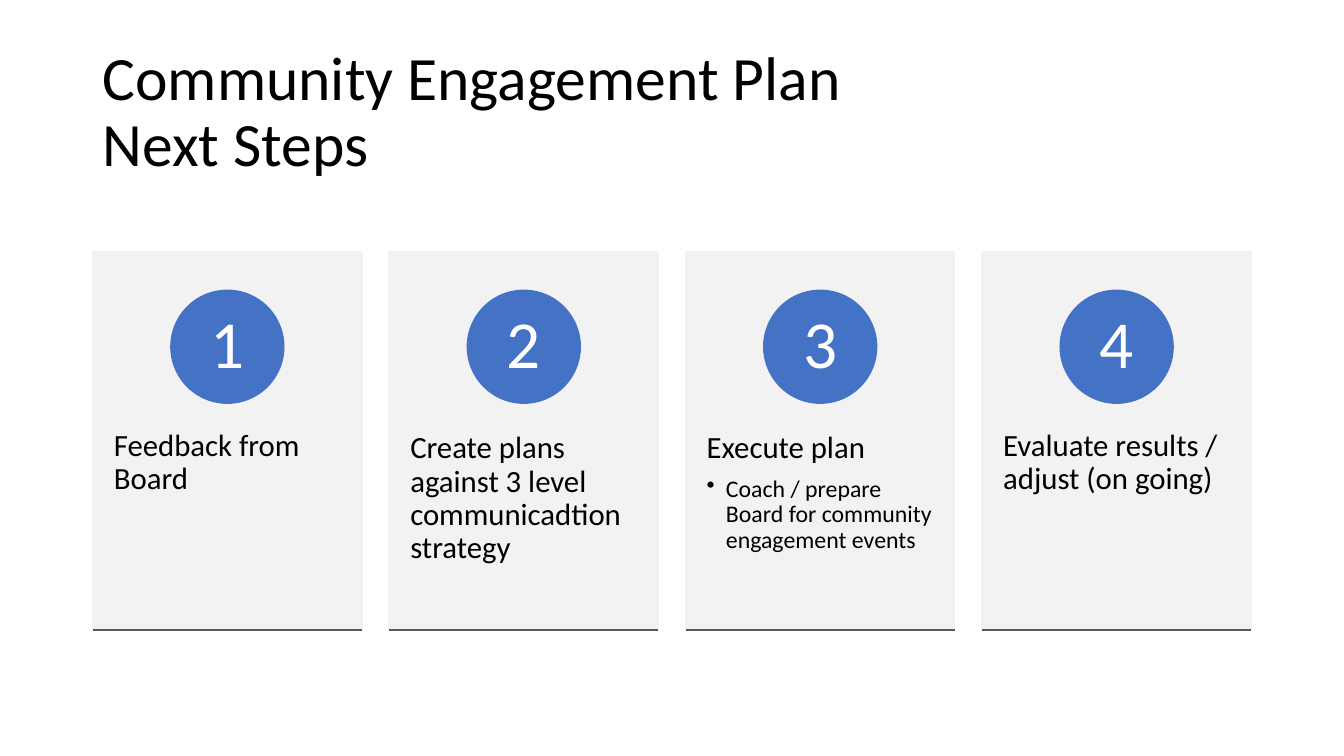
from dataclasses import dataclass

from lxml import etree
from pptx import Presentation
from pptx.dml.color import RGBColor
from pptx.enum.shapes import MSO_CONNECTOR, MSO_SHAPE
from pptx.enum.text import MSO_ANCHOR, PP_ALIGN
from pptx.oxml.ns import qn
from pptx.util import Inches, Pt

RECTANGLE = MSO_SHAPE.RECTANGLE
OVAL = MSO_SHAPE.OVAL
STRAIGHT = MSO_CONNECTOR.STRAIGHT
MIDDLE = MSO_ANCHOR.MIDDLE
TOP = MSO_ANCHOR.TOP
CENTER = PP_ALIGN.CENTER
LEFT = PP_ALIGN.LEFT

FONT = "Calibri"
BLACK = RGBColor(0x00, 0x00, 0x00)
WHITE = RGBColor(0xFF, 0xFF, 0xFF)
BLUE = RGBColor(0x44, 0x72, 0xC4)
CARD_GRAY = RGBColor(0xF2, 0xF2, 0xF2)
RULE_GRAY = RGBColor(0x59, 0x59, 0x59)

# Card grid, in inches
CARD_LEFT, CARD_TOP = 0.92, 2.5
CARD_WIDTH, CARD_HEIGHT = 2.67, 3.74
CARD_PITCH = 2.94
CIRCLE_SIZE, CIRCLE_TOP = 1.12, 2.88
BODY_TOP, BODY_HEIGHT = 3.93, 2.25
RULE_TOP = 6.25
BULLET_INDENT = 0.19


@dataclass(frozen=True)
class Step:
    heading: str
    details: tuple[str, ...] = ()


STEPS = (
    Step("Feedback from Board"),
    Step("Create plans against 3 level communicadtion strategy"),
    Step("Execute plan", ("Coach / prepare Board for community engagement events",)),
    Step("Evaluate results / adjust (on going)"),
)


def set_frame(text_frame, anchor, horizontal: float, vertical: float) -> None:
    text_frame.word_wrap = True
    text_frame.vertical_anchor = anchor
    text_frame.margin_left = text_frame.margin_right = Inches(horizontal)
    text_frame.margin_top = text_frame.margin_bottom = Inches(vertical)


def format_paragraph(paragraph, size: int, color: RGBColor, alignment=LEFT,
                     space_after: float = 0) -> None:
    paragraph.alignment = alignment
    paragraph.line_spacing = 0.9
    paragraph.space_after = Pt(space_after)
    for run in paragraph.runs:
        run.font.name = FONT
        run.font.size = Pt(size)
        run.font.color.rgb = color


def add_bullet(paragraph) -> None:
    properties = paragraph._p.get_or_add_pPr()
    properties.set("marL", str(Inches(BULLET_INDENT)))
    properties.set("indent", str(-Inches(BULLET_INDENT)))
    etree.SubElement(properties, qn("a:buChar")).set("char", "•")


def add_filled_shape(slide, kind, left: float, top: float, width: float,
                     height: float, color: RGBColor):
    shape = slide.shapes.add_shape(
        kind, Inches(left), Inches(top), Inches(width), Inches(height))
    shape.shadow.inherit = False
    shape.fill.solid()
    shape.fill.fore_color.rgb = color
    shape.line.color.rgb = color
    shape.line.width = Pt(1)
    return shape


def add_title(slide, text: str) -> None:
    title = slide.shapes.add_textbox(
        Inches(0.92), Inches(0.4), Inches(11.5), Inches(1.45))
    set_frame(title.text_frame, MIDDLE, 0.1, 0.05)
    paragraph = title.text_frame.paragraphs[0]
    paragraph.text = text
    format_paragraph(paragraph, 44, BLACK)


def add_step(slide, index: int, step: Step) -> None:
    left = CARD_LEFT + index * CARD_PITCH

    # Card background
    add_filled_shape(slide, RECTANGLE, left, CARD_TOP, CARD_WIDTH, CARD_HEIGHT,
                     CARD_GRAY)

    # Step text with optional bullets
    body = slide.shapes.add_textbox(
        Inches(left), Inches(BODY_TOP), Inches(CARD_WIDTH), Inches(BODY_HEIGHT))
    set_frame(body.text_frame, TOP, 0.21, 0.36)
    heading = body.text_frame.paragraphs[0]
    heading.text = step.heading
    format_paragraph(heading, 22, BLACK, space_after=7.7)
    for detail in step.details:
        paragraph = body.text_frame.add_paragraph()
        paragraph.text = detail
        paragraph.level = 1
        format_paragraph(paragraph, 17, BLACK, space_after=2.5)
        add_bullet(paragraph)

    # Numbered circle
    circle = add_filled_shape(
        slide, OVAL, left + (CARD_WIDTH - CIRCLE_SIZE) / 2, CIRCLE_TOP,
        CIRCLE_SIZE, CIRCLE_SIZE, BLUE)
    set_frame(circle.text_frame, MIDDLE, 0.09, 0.01)
    number = circle.text_frame.paragraphs[0]
    number.text = str(index + 1)
    format_paragraph(number, 48, WHITE, CENTER)

    # Rule under the card
    rule = slide.shapes.add_connector(
        STRAIGHT, Inches(left), Inches(RULE_TOP),
        Inches(left + CARD_WIDTH), Inches(RULE_TOP))
    rule.line.color.rgb = RULE_GRAY
    rule.line.width = Pt(0.75)
    etree.SubElement(rule._element.spPr, qn("a:effectLst"))


def main() -> None:
    presentation = Presentation()
    presentation.slide_width = Inches(13.33)
    presentation.slide_height = Inches(7.5)
    slide = presentation.slides.add_slide(presentation.slide_layouts[6])

    add_title(slide, "Community Engagement Plan\vNext Steps")
    for index, step in enumerate(STEPS):
        add_step(slide, index, step)

    presentation.save("out.pptx")


if __name__ == "__main__":
    main()
